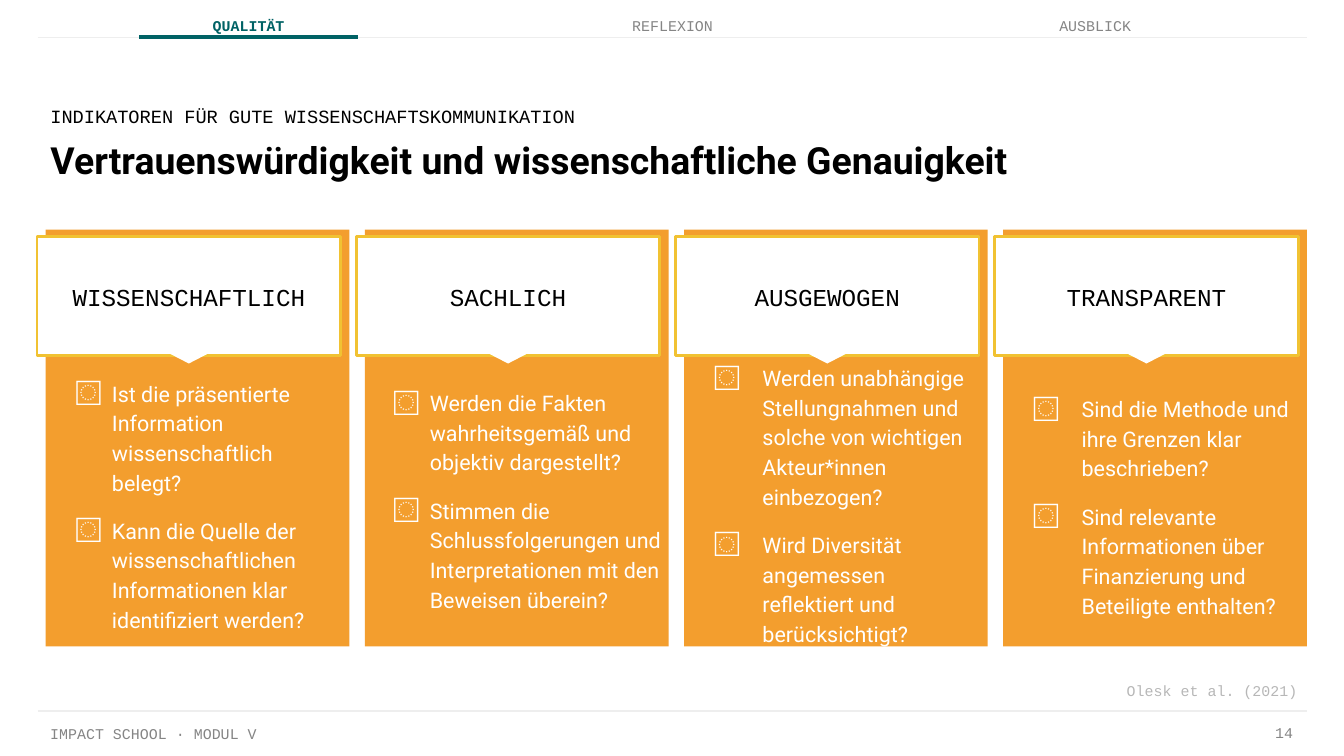
from lxml import etree
from pptx import Presentation
from pptx.dml.color import RGBColor
from pptx.enum import shapes as es, text as et
from pptx.oxml.ns import qn
from pptx.util import Emu, Pt

PX = 4572  # 200 px to the inch
MONO, SANS = "Courier New", "Roboto"
GREY, TEAL, ORANGE, YELLOW = "858585", "006265", "F39E2E", "F1C232"
WHITE, BLACK = "FFFFFF", "000000"
LEFT, MID, RIGHT = et.PP_ALIGN.LEFT, et.PP_ALIGN.CENTER, et.PP_ALIGN.RIGHT
TOP, CENTER = et.MSO_ANCHOR.TOP, et.MSO_ANCHOR.MIDDLE

# Card heading; list offset, top, width, height; indent, hang; questions
CARDS = [
    ("WISSENSCHAFTLICH", (30, 550, 448, 402), (62, 48), [
        "Ist die präsentierte Information wissenschaftlich belegt?",
        "Kann die Quelle der wissenschaftlichen Informationen klar "
        "identifiziert werden?"]),
    ("SACHLICH", (28, 544, 452, 398), (62, 48), [
        "Werden die Fakten wahrheitsgemäß und objektiv dargestellt?",
        "Stimmen die Schlussfolgerungen und Interpretationen mit den "
        "Beweisen überein?"]),
    ("AUSGEWOGEN", (10, 549, 452, 402), (100, 66), [
        "Werden unabhängige Stellungnahmen und solche von wichtigen "
        "Akteur*innen einbezogen?",
        "Wird Diversität angemessen reflektiert und berücksichtigt?"]),
    ("TRANSPARENT", (10, 553, 452, 398), (100, 66), [
        "Sind die Methode und ihre Grenzen klar beschrieben?",
        "Sind relevante Informationen über Finanzierung und Beteiligte "
        "enthalten?"]),
]
TABS = [("QUALITÄT", 195, 350, TEAL, True),
        ("REFLEXION", 660, 682, GREY, False),
        ("AUSBLICK", 1344, 572, GREY, False)]


def px(*vals):
    return [Emu(v * PX) for v in vals]


def color(hex_str):
    return RGBColor.from_string(hex_str)


def style(par, size, hue, font=MONO, bold=False):
    for run in par.runs:
        run.font.size = Pt(size)
        run.font.name = font
        run.font.bold = bold
        run.font.color.rgb = color(hue)


def setup(frame, anchor):
    frame.word_wrap = True
    frame.auto_size = et.MSO_AUTO_SIZE.NONE
    frame.vertical_anchor = anchor
    frame.margin_left = frame.margin_right = Emu(20 * PX)
    frame.margin_top = frame.margin_bottom = Emu(20 * PX)


def fill_text(shape, words, size, hue, align=LEFT, anchor=TOP, lead=1.0,
              **look):
    frame = shape.text_frame
    setup(frame, anchor)
    frame.text = words
    par = frame.paragraphs[0]
    par.alignment = align
    par.line_spacing = lead
    par.space_before = Pt(0)
    style(par, size, hue, **look)


def add_label(slide, box, words, size, hue, **look):
    fill_text(slide.shapes.add_textbox(*px(*box)), words, size, hue, **look)


def set_holder(shape, box, words, size, **look):
    shape.left, shape.top, shape.width, shape.height = px(*box)
    fill_text(shape, words, size, BLACK, **look)


def add_rule(slide, x1, x2, y, hue, width):
    line = slide.shapes.add_connector(
        es.MSO_CONNECTOR.STRAIGHT, *px(x1, y, x2, y))
    line.line.color.rgb = color(hue)
    line.line.width = Pt(width)
    etree.SubElement(line._element.spPr, qn("a:effectLst"))


def add_block(slide, kind, box, hue, edge=None):
    block = slide.shapes.add_shape(kind, *px(*box))
    block.shadow.inherit = False
    block.fill.solid()
    block.fill.fore_color.rgb = color(hue)
    if edge:
        block.line.color.rgb = color(edge)
        block.line.width = Pt(1.5)
    else:
        block.line.fill.background()
    return block


def add_bullet(par, indent, hang):
    props = par._p.get_or_add_pPr()
    props.set("marL", str(indent * PX))
    props.set("indent", str(-hang * PX))
    tint = etree.SubElement(props, qn("a:buClr"))
    etree.SubElement(tint, qn("a:srgbClr"), val=WHITE)
    etree.SubElement(props, qn("a:buFont"), typeface=SANS)
    etree.SubElement(props, qn("a:buChar"), char="⃞")


def add_list(slide, box, indent, hang, items):
    frame = slide.shapes.add_textbox(*px(*box)).text_frame
    setup(frame, CENTER)
    frame.text = "\n".join(items)
    for i, par in enumerate(frame.paragraphs):
        add_bullet(par, indent, hang)
        par.line_spacing = 1.15
        par.space_before = Pt(10 if i else 0)
        style(par, 11.5, WHITE, font=SANS)


def add_card(slide, x, head, place, inset, items):
    rect = es.MSO_SHAPE.RECTANGLE
    add_block(slide, rect, (x + 13, 342, 452, 620), ORANGE)
    add_block(slide, rect, (x, 352, 452, 177), WHITE, YELLOW)
    arrow = add_block(slide, es.MSO_SHAPE.RIGHT_ARROW,
                      (x + 212, 496, 28, 62), WHITE)
    arrow.rotation = 90
    arrow.adjustments[0], arrow.adjustments[1] = 0.34, 0.57
    add_label(slide, (x, 400, 452, 94), head, 13, BLACK, align=MID)
    dx, top, wide, high = place
    add_list(slide, (x + dx, top, wide, high), *inset, items)


def main():
    deck = Presentation()
    deck.slide_width, deck.slide_height = px(2000, 1125)
    slide = deck.slides.add_slide(deck.slide_layouts[0])

    # Footer and navigation
    add_label(slide, (55, 1058, 1260, 68), "IMPACT SCHOOL · MODUL V", 8, GREY)
    add_label(slide, (1858, 1058, 86, 68), "14", 8, GREY,
              align=RIGHT, anchor=CENTER, lead=0.8)
    for y in (1058, 56):
        add_rule(slide, 56, 1945, y, "EEEEEE", 0.75)
    for name, x, width, hue, bold in TABS:
        add_label(slide, (x, 4, width, 68), name, 8, hue,
                  align=MID, anchor=CENTER, bold=bold)
    add_rule(slide, 207, 533, 55, TEAL, 2.25)

    # Headings
    title, sub = slide.placeholders
    set_holder(title, (55, 184, 1554, 104),
               "Vertrauenswürdigkeit und wissenschaftliche Genauigkeit",
               20, font=SANS, bold=True)
    set_holder(sub, (55, 153, 1554, 40),
               "INDIKATOREN FÜR GUTE WISSENSCHAFTSKOMMUNIKATION",
               10, anchor=CENTER)

    # Cards
    for i, card in enumerate(CARDS):
        add_card(slide, 55 + 475 * i, *card)

    # Source
    add_label(slide, (61, 995, 1890, 94), "Olesk et al. (2021)", 8, "B7B7B7",
              align=RIGHT)
    deck.save("out.pptx")


if __name__ == "__main__":
    main()
